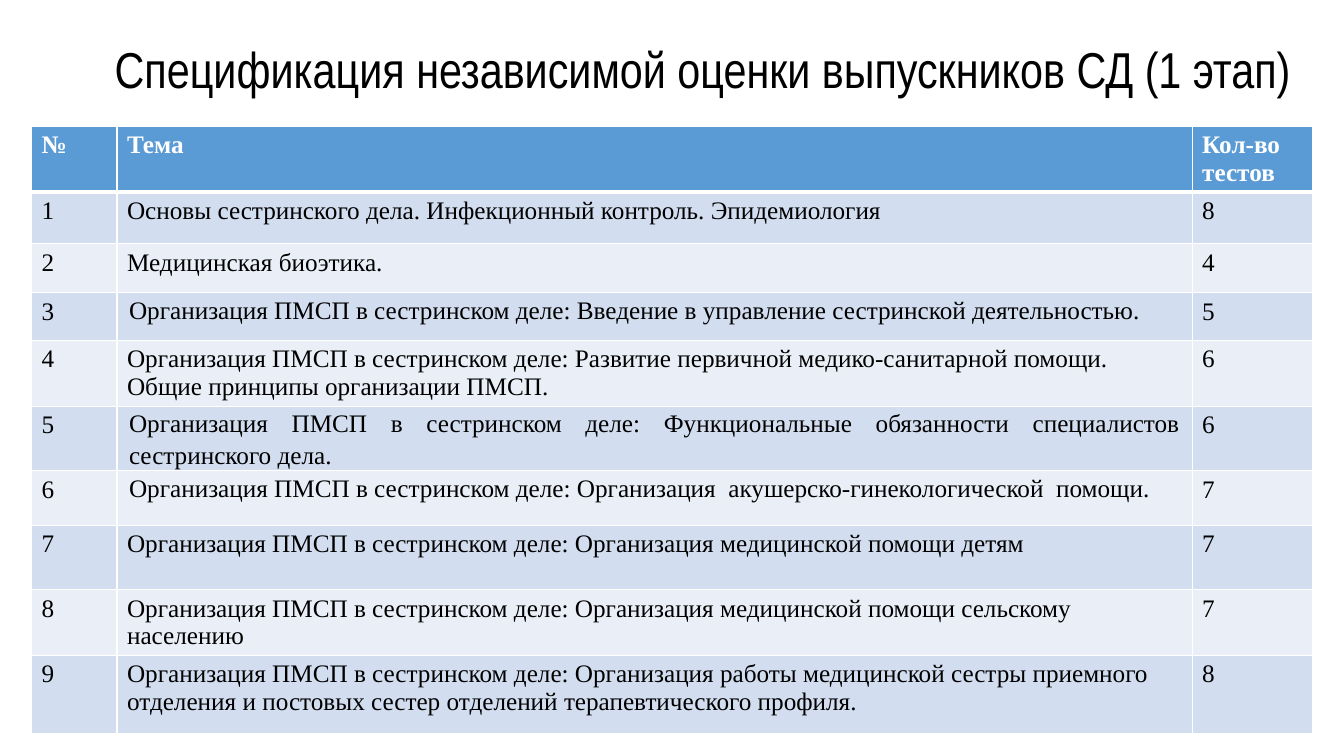
from lxml import etree
from pptx import Presentation
from pptx.dml.color import RGBColor
from pptx.enum.text import MSO_ANCHOR, MSO_AUTO_SIZE, PP_ALIGN
from pptx.oxml.ns import qn
from pptx.util import Pt

CENTER, JUSTIFY, LEFT = PP_ALIGN.CENTER, PP_ALIGN.JUSTIFY, PP_ALIGN.LEFT
BLACK = RGBColor(0x00, 0x00, 0x00)
WHITE = RGBColor(0xFF, 0xFF, 0xFF)
HEADER_BLUE = RGBColor(0x5B, 0x9B, 0xD5)
BAND_DARK = RGBColor(0xD2, 0xDE, 0xEF)
BAND_LIGHT = RGBColor(0xEA, 0xEF, 0xF7)

HEADERS = ["№", "Тема", "Кол-во тестов"]
MODULE = "Организация ПМСП в сестринском деле: "
TOPICS = [
    ("Основы сестринского дела. Инфекционный контроль. Эпидемиология", 8),
    ("Медицинская биоэтика.", 4),
    (MODULE + "Введение в управление сестринской деятельностью.", 5),
    (MODULE + "Развитие первичной медико-санитарной помощи. "
     "Общие принципы организации ПМСП.", 6),
    (MODULE + "Функциональные обязанности специалистов сестринского дела.", 6),
    (MODULE + "Организация  акушерско-гинекологической  помощи.", 7),
    (MODULE + "Организация медицинской помощи детям", 7),
    (MODULE + "Организация медицинской помощи сельскому населению", 7),
    (MODULE + "Организация работы медицинской сестры приемного отделения "
     "и постовых сестер отделений терапевтического профиля.", 8),
]
COLUMN_WIDTHS = [61, 768, 86]
ROW_HEIGHTS = [46, 37, 35, 34, 47, 46, 39, 46, 47, 56]
# Topics set with looser lines and their own cell margins
LOOSE_TOPICS = {3: LEFT, 5: JUSTIFY, 6: JUSTIFY}
LOOSE_MARGINS = {"margin_left": Pt(8.64), "margin_right": Pt(8.64),
                 "margin_top": Pt(0), "margin_bottom": Pt(0)}


def set_format(target, values):
    for key, value in values.items():
        setattr(target, key, value)


def set_borders(cell, bottom_width):
    properties = cell._tc.get_or_add_tcPr()
    for side, width in (("L", 1), ("R", 1), ("T", 1), ("B", bottom_width)):
        border = etree.SubElement(properties, qn("a:ln" + side), w=str(Pt(width)))
        fill = etree.SubElement(border, qn("a:solidFill"))
        etree.SubElement(fill, qn("a:srgbClr"), val=str(WHITE))


presentation = Presentation()
set_format(presentation, {"slide_width": Pt(960), "slide_height": Pt(540)})
slide = presentation.slides.add_slide(presentation.slide_layouts[5])

# Title
heading = slide.shapes.title
set_format(heading, {"left": Pt(66.2), "top": Pt(28.8),
                     "width": Pt(872), "height": Pt(45.4)})
set_format(heading.text_frame, {
    "text": "Спецификация независимой оценки выпускников СД (1 этап)",
    "vertical_anchor": MSO_ANCHOR.MIDDLE, "word_wrap": True,
    "auto_size": MSO_AUTO_SIZE.NONE})
heading_line = heading.text_frame.paragraphs[0]
set_format(heading_line, {"alignment": CENTER, "line_spacing": 0.9})
set_format(heading_line.runs[0].font, {"name": "Arial Narrow", "size": Pt(36)})
heading_line.runs[0].font.color.rgb = BLACK

# Table grid
specification = slide.shapes.add_table(
    len(ROW_HEIGHTS), len(COLUMN_WIDTHS), Pt(22.6), Pt(90),
    Pt(sum(COLUMN_WIDTHS)), Pt(sum(ROW_HEIGHTS))).table
for column, width in zip(specification.columns, COLUMN_WIDTHS):
    column.width = Pt(width)
for row, height in zip(specification.rows, ROW_HEIGHTS):
    row.height = Pt(height)

# Table cells
rows = [HEADERS] + [[str(number), topic, str(tests)]
                    for number, (topic, tests) in enumerate(TOPICS, 1)]
for number, row in enumerate(rows):
    is_header = number == 0
    band = BAND_DARK if number % 2 else BAND_LIGHT
    for position, content in enumerate(row):
        cell = specification.cell(number, position)
        cell.text = content
        set_borders(cell, 3 if is_header else 1)
        cell.fill.solid()
        cell.fill.fore_color.rgb = HEADER_BLUE if is_header else band
        line = cell.text_frame.paragraphs[0]
        set_format(line.runs[0].font, {"name": "Times New Roman", "size": Pt(18),
                                       "bold": is_header})
        line.runs[0].font.color.rgb = WHITE if is_header else BLACK
        if position == 1 and number in LOOSE_TOPICS:
            set_format(cell, LOOSE_MARGINS)
            set_format(line, {"alignment": LOOSE_TOPICS[number], "line_spacing": 1.15})

presentation.save("out.pptx")
